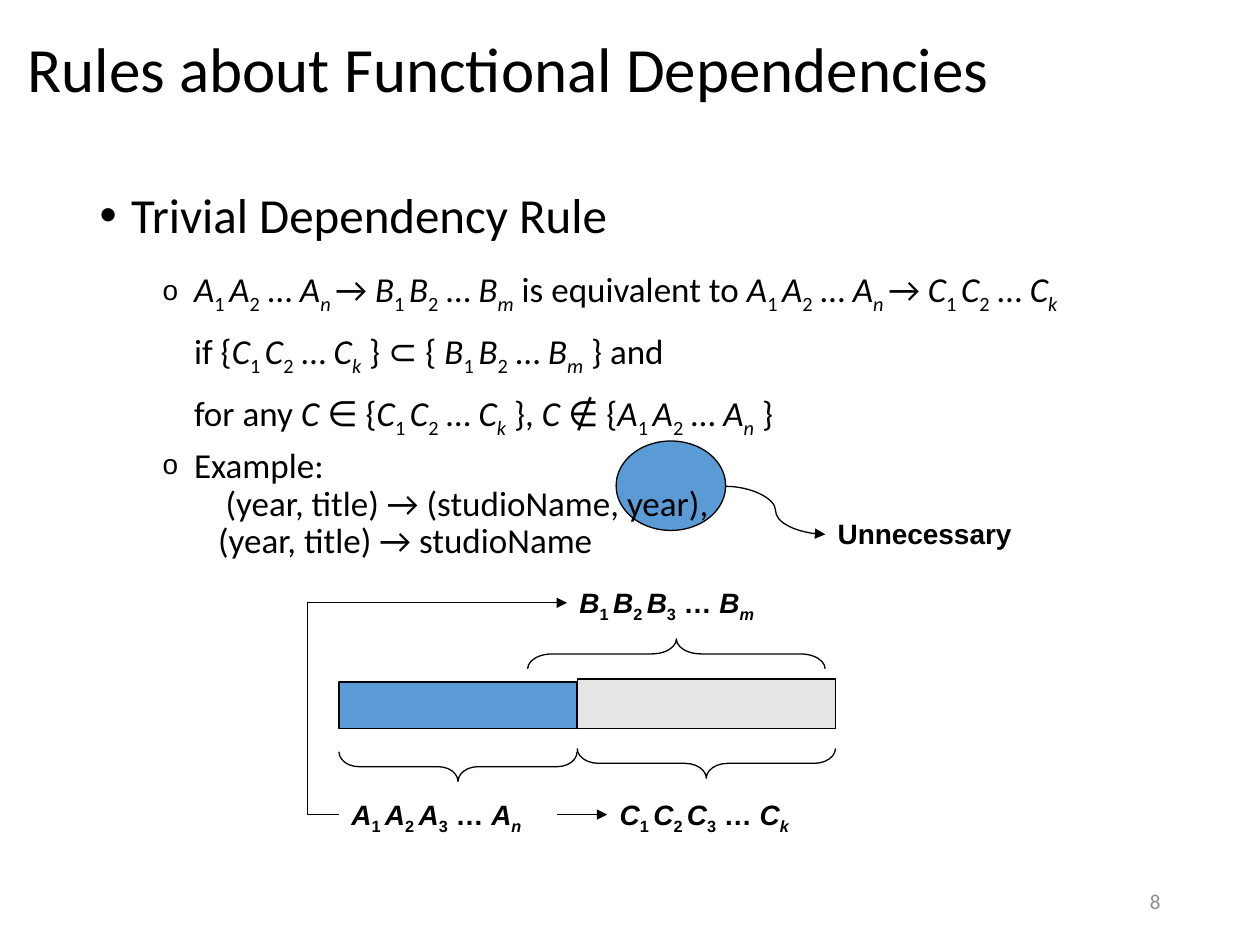
from dataclasses import dataclass

from pptx import Presentation
from pptx.dml.color import RGBColor
from pptx.enum.shapes import MSO_CONNECTOR as CONN, MSO_SHAPE as SHAPE
from pptx.enum.text import MSO_ANCHOR as ANCHOR, MSO_AUTO_SIZE as AUTO, PP_ALIGN as ALIGN
from pptx.oxml.ns import qn
from pptx.util import Pt


@dataclass(frozen=True)
class Theme:
    ink: str = "000000"
    blue: str = "5B9BD5"
    grey: str = "E7E6E6"
    muted: str = "8C8C8C"
    text_font: str = "Calibri"
    label_font: str = "Arial"
    title: int = 36
    heading: int = 28
    body: int = 20
    label: int = 16
    number: int = 12
    line: float = 0.75


def series(letter, last, count=2):
    """Runs for an indexed list such as A1 A2 … An."""
    runs = []
    for n in range(1, count + 1):
        runs += [(letter, "i"), (f"{n} " if n < count else f"{n}", "s")]
    return runs + [(" … ", ""), (letter, "i"), (last, "is")]


def set_all(target, values):
    for name, value in values.items():
        setattr(target, name, value)


class SlideBuilder:
    def __init__(self, slide, theme):
        self.slide, self.shapes, self.theme = slide, slide.shapes, theme

    def place(self, sp, box):
        set_all(sp, dict(zip(("left", "top", "width", "height"), map(Pt, box))))

    def add_runs(self, p, runs, size, font=None, color=None, bold=False):
        """Add (text, style) runs; in a style, i is italic and s is subscript."""
        for text, style in runs:
            for i, part in enumerate(text.split("\n")):
                if i:
                    p.add_line_break()
                if not part:
                    continue
                r = p.add_run()
                r.text = part
                set_all(r.font, {"size": Pt(size), "name": font or self.theme.text_font,
                                 "bold": bold, "italic": "i" in style})
                r.font.color.rgb = RGBColor.from_string(color or self.theme.ink)
                if "s" in style:
                    r.font._element.set("baseline", "-25000")

    def title(self, text, box):
        sp = self.shapes.title
        self.place(sp, box)
        tf = sp.text_frame
        set_all(tf, {"auto_size": AUTO.NONE, "vertical_anchor": ANCHOR.MIDDLE})
        p = tf.paragraphs[0]
        set_all(p, {"alignment": ALIGN.LEFT, "line_spacing": 0.9})
        self.add_runs(p, [(text, "")], self.theme.title)

    def body(self, items, box):
        sp = self.slide.placeholders[1]
        self.place(sp, box)
        tf = sp.text_frame
        tf.auto_size = AUTO.NONE
        for i, item in enumerate(items):
            p = tf.add_paragraph() if i else tf.paragraphs[0]
            set_all(p, {"level": item["level"], "line_spacing": item.get("spacing", 0.9),
                        "space_before": Pt(item["before"])})
            self.bullet(p, item.get("bullet"), item["indent"], item.get("scale", 100))
            self.add_runs(p, item["runs"], item.get("size", self.theme.body))

    def bullet(self, p, char, indent, scale):
        pPr = p._p.get_or_add_pPr()
        pPr.set("marL", str(Pt(indent)))
        pPr.set("indent", str(Pt(-18 if char else 0)))
        parts = [("a:buNone", {})]
        if char:
            parts = [("a:buSzPct", {"val": str(scale * 1000)}),
                     ("a:buFont", {"typeface": self.theme.label_font}),
                     ("a:buChar", {"char": char})]
        for tag, attributes in parts:
            pPr.append(pPr.makeelement(qn(tag), attributes))

    def text(self, runs, box, size, align=ALIGN.LEFT, anchor=ANCHOR.TOP,
             fit=AUTO.SHAPE_TO_FIT_TEXT, **font):
        sp = self.shapes.add_textbox(*map(Pt, box))
        tf = sp.text_frame
        set_all(tf, {"word_wrap": True, "auto_size": fit, "vertical_anchor": anchor})
        p = tf.paragraphs[0]
        p.alignment = align
        self.add_runs(p, runs, size, **font)
        return sp

    def label(self, runs, left, top, width):
        return self.text(runs, (left, top, width, 26.6), self.theme.label,
                         font=self.theme.label_font, bold=True)

    def shape(self, kind, box, fill=None):
        sp = self.shapes.add_shape(kind, *map(Pt, box))
        sp.shadow.inherit = False
        if fill:
            sp.fill.solid()
            sp.fill.fore_color.rgb = RGBColor.from_string(fill)
        else:
            sp.fill.background()
        self.outline(sp.line)
        return sp

    def outline(self, line):
        line.width = Pt(self.theme.line)
        line.color.rgb = RGBColor.from_string(self.theme.ink)

    def brace(self, left, top, span, rotation, curl):
        """Horizontal brace; left, top and span describe it after rotation."""
        depth = 17
        shift = (span - depth) / 2
        sp = self.shape(SHAPE.LEFT_BRACE, (left + shift, top - shift, depth, span))
        sp.rotation = rotation
        sp.adjustments[0] = curl

    def arrow(self, kind, start, end, bend=None):
        c = self.shapes.add_connector(kind, *map(Pt, start + end))
        self.outline(c.line)
        ln = c.line._get_or_add_ln()
        ln.append(ln.makeelement(qn("a:tailEnd"), {"type": "triangle"}))
        spPr = c._element.spPr
        spPr.append(spPr.makeelement(qn("a:effectLst"), {}))
        if bend is not None:
            guides = spPr.find(qn("a:prstGeom")).get_or_add_avLst()
            guides.append(guides.makeelement(
                qn("a:gd"), {"name": "adj1", "fmla": f"val {round(bend * 100000)}"}))
        return c

    def send_to_back(self, sp):
        self.shapes._spTree.insert(2, sp._element)


def rule_items(theme):
    a, b, c = series("A", "n"), series("B", "m"), series("C", "k")
    arrow = [(" ", "is"), ("→ ", "")]
    equivalence = [
        *a, *arrow, *b, (" is equivalent to ", ""), *a, *arrow, *c, (" \n", "is"),
        ("if {", ""), *c, (" } ⊂ { ", ""), *b, (" } and \nfor any ", ""),
        ("C ", "i"), ("∈ {", ""), *c, (" }, ", ""), ("C ", "i"), ("∉ {", ""), *a, (" }", "")]
    sub = {"level": 1, "before": 5, "bullet": "o", "scale": 80, "indent": 54}
    example = {"level": 1, "before": 0}
    return [
        {"level": 0, "before": 10, "bullet": "•", "indent": 18, "size": theme.heading,
         "runs": [("Trivial Dependency Rule", "")]},
        {**sub, "spacing": 1.3, "runs": equivalence},
        {**sub, "runs": [("Example:", "")]},
        {**example, "indent": 72, "runs": [("(year, title) → (studioName, year),", "")]},
        {**example, "indent": 67.7, "runs": [("(year, title) → studioName", "")]},
    ]


def main():
    prs = Presentation()
    prs.slide_width, prs.slide_height = Pt(720), Pt(540)
    theme = Theme()
    s = SlideBuilder(prs.slides.add_slide(prs.slide_layouts[1]), theme)

    s.title("Rules about Functional Dependencies", (8.6, 5.8, 702.7, 71.3))
    s.body(rule_items(theme), (49.7, 105.8, 620.6, 380.9))

    s.send_to_back(s.shape(SHAPE.OVAL, (352.1, 252, 62.6, 51.1), theme.blue))
    s.label([("Unnecessary", "")], 471.6, 291.6, 175.7)
    s.arrow(CONN.CURVE, (414.7, 277.9), (471.6, 305.3))

    bar_left, split, blue_width, grey_width = 193.7, 329.8, 136.1, 147.6
    s.shape(SHAPE.RECTANGLE, (bar_left, 389.8, blue_width, 26.4), theme.blue)
    s.shape(SHAPE.RECTANGLE, (split, 388, grey_width, 28.2), theme.grey)
    s.brace(bar_left, 429.6, blue_width, 270, 0.67)
    s.brace(split, 427.7, grey_width, 270, 0.72)
    s.brace(301.5, 365.2, 170, 90, 0.83)

    a_label = s.label(series("A", "n", 3), bar_left, 452.2, 124.6)
    c_label = s.label(series("C", "k", 3), 347, 452.2, 136.1)
    s.label(series("B", "m", 3), 324, 331.2, 136.1)
    s.arrow(CONN.ELBOW, (bar_left, 465.5), (324, 344.5), bend=-0.138)
    a_to_c = s.arrow(CONN.STRAIGHT, (318.3, 465.5), (347, 465.5))
    a_to_c.begin_connect(a_label, 3)
    a_to_c.end_connect(c_label, 1)

    s.text([("8", "")], (508.3, 500.4, 162, 28.8), theme.number, ALIGN.RIGHT,
           ANCHOR.MIDDLE, AUTO.NONE, color=theme.muted)
    prs.save("out.pptx")


if __name__ == "__main__":
    main()
